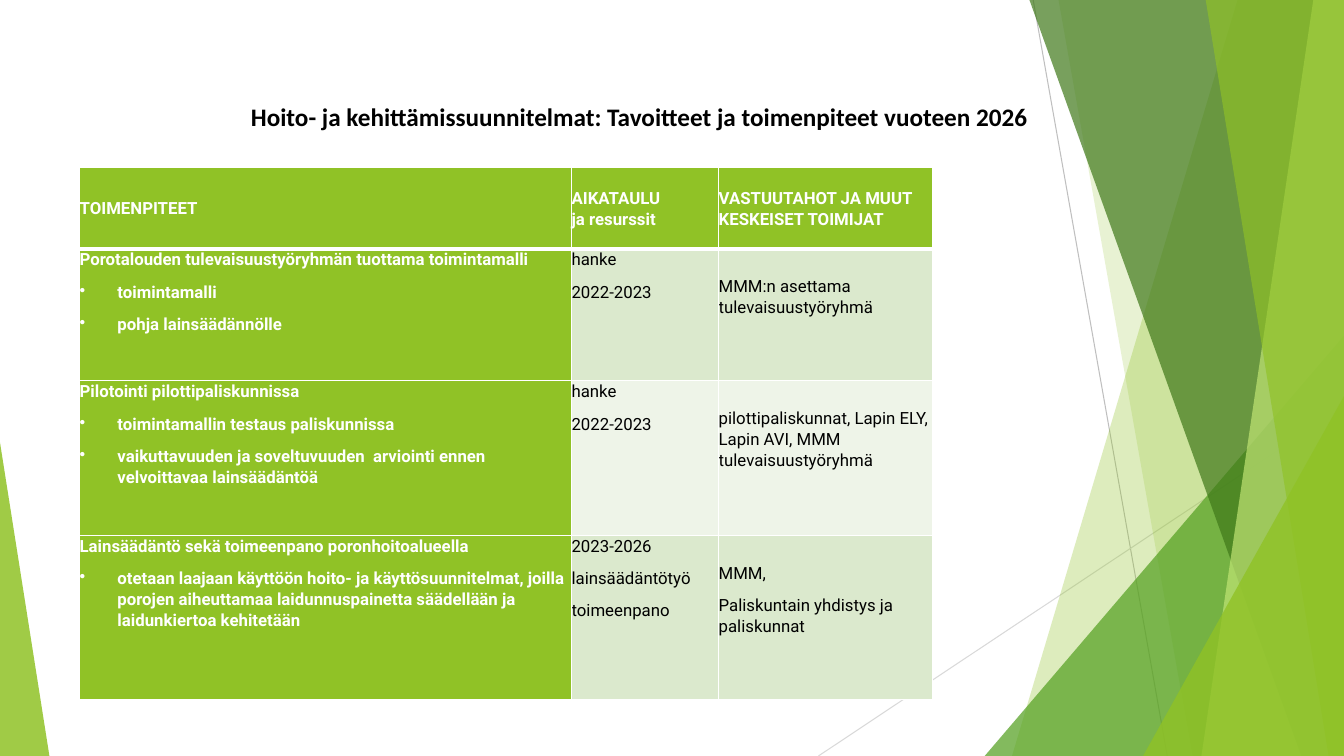
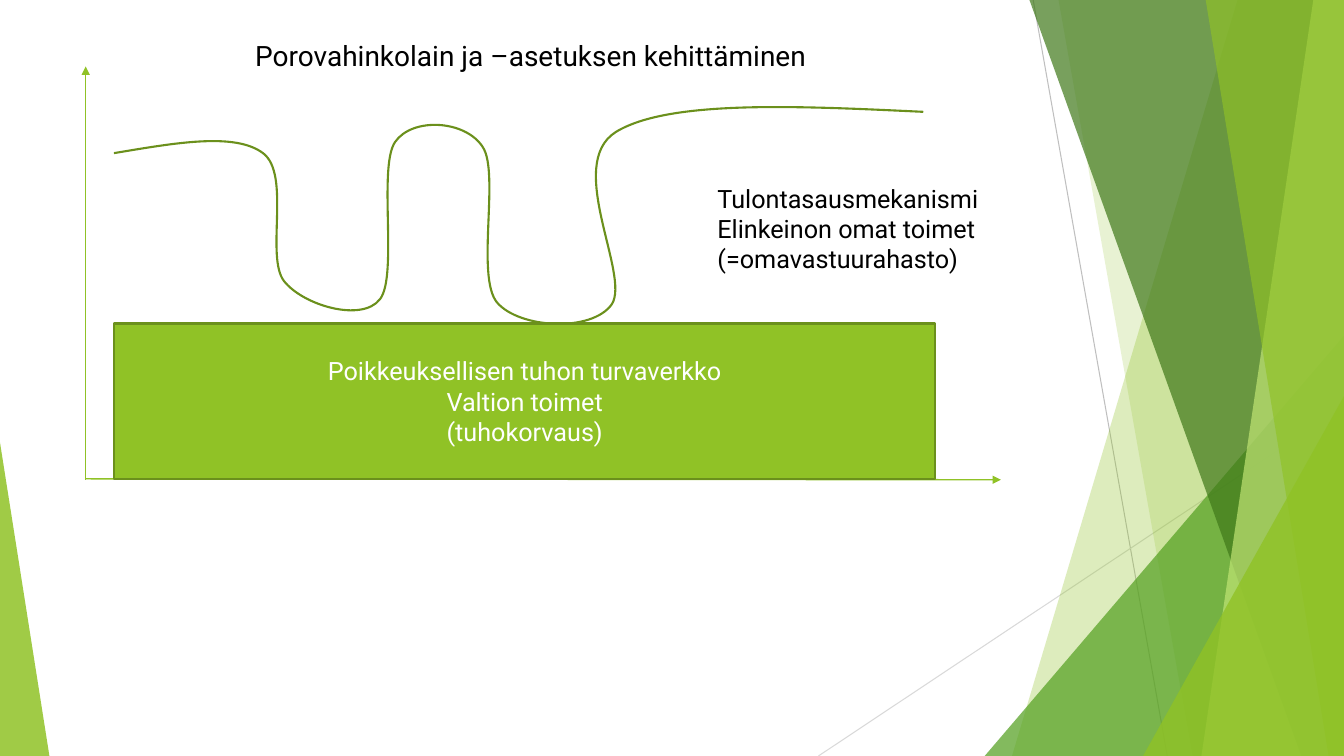
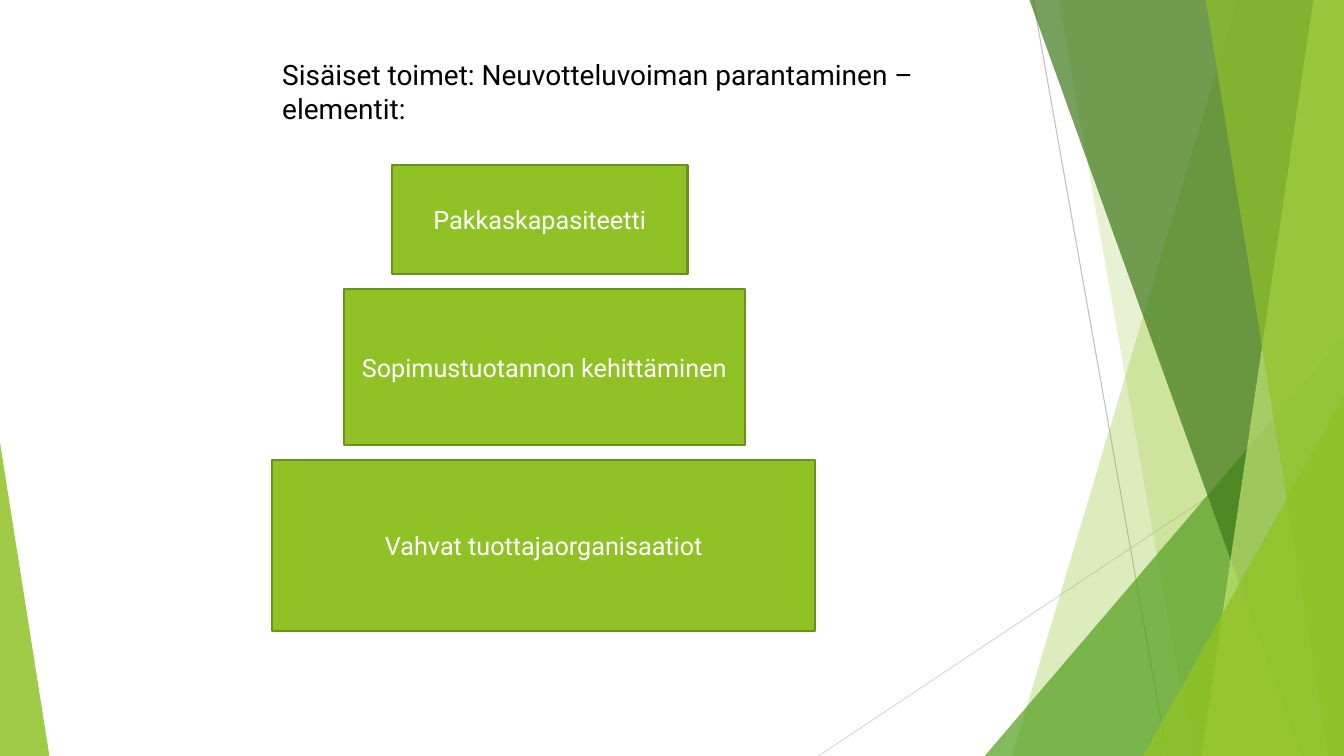
from lxml.etree import SubElement
from pptx import Presentation
from pptx.dml.color import RGBColor
from pptx.enum.shapes import MSO_CONNECTOR, MSO_SHAPE, PP_PLACEHOLDER
from pptx.enum.text import MSO_ANCHOR, MSO_AUTO_SIZE, PP_ALIGN
from pptx.oxml.ns import qn
from pptx.util import Pt

LEFT, CENTER = PP_ALIGN.LEFT, PP_ALIGN.CENTER
TOP, MIDDLE = MSO_ANCHOR.TOP, MSO_ANCHOR.MIDDLE
RECTANGLE, TRIANGLE = MSO_SHAPE.RECTANGLE, MSO_SHAPE.ISOSCELES_TRIANGLE
STRAIGHT = MSO_CONNECTOR.STRAIGHT
WIDTH, HEIGHT = 960, 540


class Theme:
    green = RGBColor.from_string("90C226")
    leaf = RGBColor.from_string("54A021")
    forest = RGBColor.from_string("3F7819")
    lime = RGBColor.from_string("C0E474")
    outline = RGBColor.from_string("6B901C")
    band_dark = RGBColor.from_string("DBE9CD")
    band_light = RGBColor.from_string("EEF4E8")
    gray = RGBColor.from_string("BFBFBF")
    light_gray = RGBColor.from_string("D9D9D9")
    white = RGBColor.from_string("FFFFFF")
    black = RGBColor.from_string("000000")
    font, heading_font = "Roboto", "Calibri"
    table_size, text_size, title_size = 12, 18, 20


def write_text(frame, lines, size, color, bold=False, align=LEFT, font=Theme.font):
    """Write one paragraph per line; a leading bullet sign makes a list item."""
    frame.text = "\n".join(line.removeprefix("• ") for line in lines)
    for line, paragraph in zip(lines, frame.paragraphs):
        paragraph.alignment = align
        if line.startswith("• "):
            properties = paragraph._p.get_or_add_pPr()
            properties.set("marL", str(Pt(27)))
            properties.set("indent", str(-Pt(27)))
            SubElement(properties, qn("a:buChar"), char="•")
        paragraph.font.name = font
        paragraph.font.size = Pt(size)
        paragraph.font.bold = bold
        paragraph.font.color.rgb = color


def add_line(slide, ends, color, width, arrow=False):
    connector = slide.shapes.add_connector(STRAIGHT, *map(Pt, ends))
    connector.line.color.rgb = color
    connector.line.width = Pt(width)
    if arrow:
        SubElement(connector.element.find(".//" + qn("a:ln")), qn("a:tailEnd"), type="triangle")
    SubElement(connector.element.spPr, qn("a:effectLst"))
    return connector


presentation = Presentation()
presentation.slide_width, presentation.slide_height = Pt(WIDTH), Pt(HEIGHT)
layout = presentation.slide_layouts[5]
for placeholder in list(layout.placeholders):
    if placeholder.placeholder_format.type != PP_PLACEHOLDER.TITLE:
        placeholder.element.getparent().remove(placeholder.element)

# Slides and titles: text, box, font, size, bold
titles = [
    ("Hoito- ja kehittämissuunnitelmat: Tavoitteet ja toimenpiteet vuoteen 2026",
     (172, 69, 620, 29), Theme.heading_font, Theme.text_size, True),
    ("Porovahinkolain ja –asetuksen kehittäminen",
     (175, 23.8, 412, 31.7), Theme.font, Theme.title_size, False),
    ("Sisäiset toimet: Neuvotteluvoiman parantaminen – elementit:",
     (194.4, 37.4, 498.2, 55.4), Theme.font, Theme.title_size, False),
]
slides = []
for text, box, font, size, bold in titles:
    slide = presentation.slides.add_slide(layout)
    title = slide.shapes.title
    title.left, title.top, title.width, title.height = map(Pt, box)
    write_text(title.text_frame, [text], size, Theme.black, bold, font=font)
    title.text_frame.word_wrap = True
    title.text_frame.auto_size = MSO_AUTO_SIZE.NONE
    title.text_frame.vertical_anchor = MIDDLE
    slides.append(slide)
table_slide, curve_slide, stack_slide = slides

# Shared decoration: drawn once, then moved to the layout
decoration = [
    add_line(table_slide, (738, 0, 833.8, HEIGHT), Theme.gray, 0.75),
    add_line(table_slide, (WIDTH, 290.2, 584.6, HEIGHT), Theme.light_gray, 0.75),
]
# A strip has its top and bottom left x; a triangle has left, top, width and apex
facets = [
    ((884.2, 722.9), Theme.green, 30),
    ((756, 851.8), Theme.green, 20),
    ((703.4, 239.8, 256.6, 1), Theme.leaf, 72),
    ((735.1, 929.5), Theme.forest, 70),
    ((938.2, 858.2), Theme.lime, 70),
    ((861.1, 949), Theme.green, 65),
    ((816.5, 283, 143.5, 1), Theme.green, 80),
    ((0, 316.1, 35.3, 0), Theme.green, 85),
]
for geometry, color, opacity in facets:
    if len(geometry) == 2:
        top_x, bottom_x = geometry
        builder = table_slide.shapes.build_freeform(Pt(top_x), Pt(-0.7))
        builder.add_line_segments([(Pt(WIDTH), Pt(-0.7)), (Pt(WIDTH), Pt(HEIGHT)),
                                   (Pt(bottom_x), Pt(HEIGHT))])
        facet = builder.convert_to_shape()
    else:
        left, top, width, apex = geometry
        facet = table_slide.shapes.add_shape(
            TRIANGLE, Pt(left), Pt(top), Pt(width), Pt(HEIGHT - top))
        facet.adjustments[0] = apex
    facet.shadow.inherit = False
    facet.line.fill.background()
    facet.fill.solid()
    facet.fill.fore_color.rgb = color
    SubElement(facet.element.find(".//" + qn("a:srgbClr")), qn("a:alpha"), val=str(opacity * 1000))
    decoration.append(facet)
for shape in decoration:
    layout.shapes.element.append(shape.element)

# Slide 1: table of actions
rows = [
    (["TOIMENPITEET"], ["AIKATAULU\vja resurssit"], ["VASTUUTAHOT JA MUUT KESKEISET TOIMIJAT"]),
    (["Porotalouden tulevaisuustyöryhmän tuottama toimintamalli",
      "• toimintamalli", "• pohja lainsäädännölle"],
     ["hanke", "2022-2023"],
     ["MMM:n asettama tulevaisuustyöryhmä"]),
    (["Pilotointi pilottipaliskunnissa", "• toimintamallin testaus paliskunnissa",
      "• vaikuttavuuden ja soveltuvuuden  arviointi ennen velvoittavaa lainsäädäntöä"],
     ["hanke", "2022-2023"],
     ["pilottipaliskunnat, Lapin ELY, Lapin AVI, MMM tulevaisuustyöryhmä"]),
    (["Lainsäädäntö sekä toimeenpano poronhoitoalueella",
      "• otetaan laajaan käyttöön hoito- ja käyttösuunnitelmat, joilla porojen aiheuttamaa "
      "laidunnuspainetta säädellään ja laidunkiertoa kehitetään"],
     ["2023-2026", "lainsäädäntötyö", "toimeenpano"],
     ["MMM,", "Paliskuntain yhdistys ja paliskunnat"]),
]
column_widths = (351.4, 105.1, 152.6)
row_heights = (58.3, 94.3, 110.2, 117.4)
table = table_slide.shapes.add_table(
    len(rows), len(column_widths), Pt(56.9), Pt(119.5),
    Pt(sum(column_widths)), Pt(sum(row_heights))).table
for column, width in zip(table.columns, column_widths):
    column.width = Pt(width)
for row, height in zip(table.rows, row_heights):
    row.height = Pt(height)
for row_index, row in enumerate(rows):
    for column_index, lines in enumerate(row):
        cell = table.cell(row_index, column_index)
        header = row_index == 0
        strong = header or column_index == 0
        write_text(cell.text_frame, lines, Theme.table_size,
                   Theme.white if strong else Theme.black, strong)
        for paragraph in cell.text_frame.paragraphs:
            paragraph.line_spacing = 1.07
            paragraph.space_after = Pt(8)
        cell.margin_left = cell.margin_right = cell.margin_bottom = 0
        cell.margin_top = Pt(19.3) if column_index == 2 and not header else 0
        cell.vertical_anchor = MIDDLE if header else TOP
        # White borders, thicker under the header
        for side in ("lnL", "lnR", "lnT", "lnB"):
            thick = (row_index, side) in ((0, "lnB"), (1, "lnT"))
            border = SubElement(cell._tc.get_or_add_tcPr(), qn("a:" + side),
                                w=str(Pt(3 if thick else 1)))
            fill = SubElement(border, qn("a:solidFill"))
            SubElement(fill, qn("a:srgbClr"), val=str(Theme.white))
        band = Theme.band_dark if row_index % 2 else Theme.band_light
        cell.fill.solid()
        cell.fill.fore_color.rgb = Theme.green if strong else band

# Slide 2: axes
for ends in ((61.2, 342, 715, 342.7), (61.2, 342.7, 61.2, 47.5)):
    add_line(curve_slide, ends, Theme.green, 1, arrow=True)

# Slide 2: income curve, three points for each Bézier segment
curve_start = (81.4, 109.4)
curve_points = [
    (124.6, 102.2), (167.8, 94.3), (187.9, 109.4),
    (208.1, 124.6), (189.4, 183.6), (203, 200.9),
    (216.7, 218.2), (258.5, 230.4), (271.4, 213.8),
    (284.4, 197.3), (270, 119.5), (282.2, 101.5),
    (294.5, 83.5), (332.6, 85.7), (344.9, 105.1),
    (357.1, 123.8), (339.8, 197.3), (355, 216),
    (370.8, 234.7), (422.6, 237.6), (437, 217.4),
    (450.7, 196.6), (403.2, 117.4), (439.9, 94.3),
    (477.4, 71.3), (568.8, 75.6), (659.5, 79.9),
]
builder = curve_slide.shapes.build_freeform(*map(Pt, curve_start))
builder.add_line_segments([(Pt(x), Pt(y)) for x, y in curve_points], close=False)
curve = builder.convert_to_shape()
curve.shadow.inherit = False
curve.fill.background()
curve.line.color.rgb = Theme.outline
curve.line.width = Pt(1.5)
outline = curve.element.find(".//" + qn("a:path"))
segments = outline.findall(qn("a:lnTo"))
for first in range(0, len(segments), 3):
    bezier = SubElement(outline, qn("a:cubicBezTo"))
    for segment in segments[first:first + 3]:
        bezier.append(segment[0])
        outline.remove(segment)

# Slide 2: note beside the curve
note = curve_slide.shapes.add_textbox(Pt(505.4), Pt(127.4), Pt(205.9), Pt(72.7))
write_text(note.text_frame,
           ["Tulontasausmekanismi", "Elinkeinon omat toimet", "(=omavastuurahasto)"],
           Theme.text_size, Theme.black)
note.text_frame.word_wrap = True

# Slides 2 and 3: green boxes, those of slide 3 stacked with equal gaps
boxes = [(curve_slide, 81.4, 231.1, 586.8, 110.9,
          ["Poikkeuksellisen tuhon turvaverkko", "Valtion toimet", "(tuhokorvaus)"])]
stack_top, stack_gap = 118.1, 10.8
for left, width, height, label in (
        (280.1, 211, 77.8, "Pakkaskapasiteetti"),
        (245.5, 286.6, 110.9, "Sopimustuotannon kehittäminen"),
        (194.4, 388.1, 122.4, "Vahvat tuottajaorganisaatiot")):
    boxes.append((stack_slide, left, stack_top, width, height, [label]))
    stack_top += height + stack_gap
for slide, left, top, width, height, lines in boxes:
    box = slide.shapes.add_shape(RECTANGLE, Pt(left), Pt(top), Pt(width), Pt(height))
    box.shadow.inherit = False
    box.fill.solid()
    box.fill.fore_color.rgb = Theme.green
    box.line.color.rgb = Theme.outline
    box.line.width = Pt(1.5)
    write_text(box.text_frame, lines, Theme.text_size, Theme.white, align=CENTER)

presentation.save("out.pptx")
